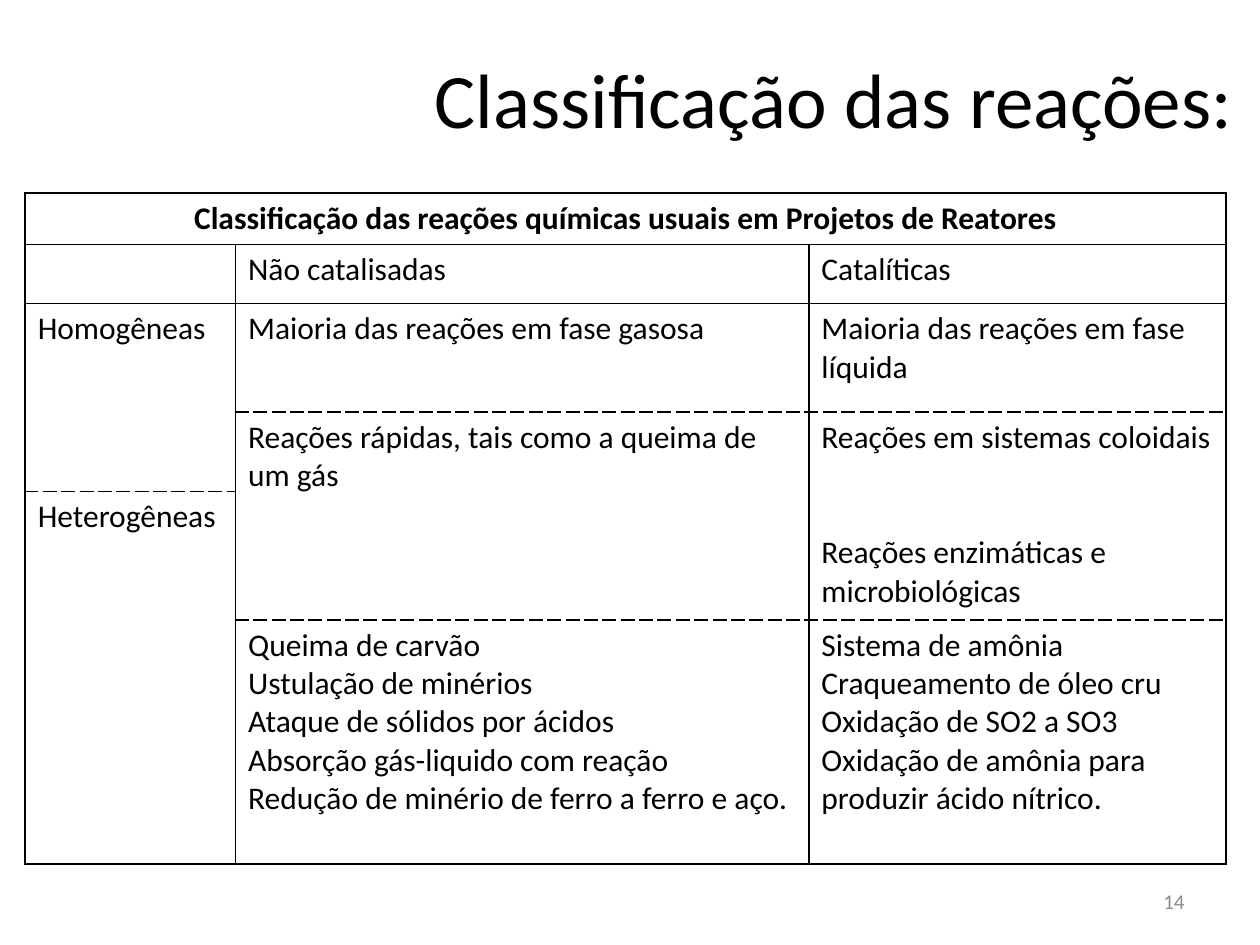
from itertools import product

from lxml.etree import SubElement
from pptx import Presentation
from pptx.dml.color import RGBColor
from pptx.enum.text import MSO_ANCHOR, PP_ALIGN
from pptx.oxml.ns import qn
from pptx.util import Inches, Pt

BLACK = RGBColor(0x00, 0x00, 0x00)
GRAY = RGBColor(0x8C, 0x8C, 0x8C)
FONT = "Calibri"

COLUMN_WIDTHS = [1.67, 4.55, 3.31]
ROW_HEIGHTS = [0.41, 0.47, 0.86, 0.63, 1.02, 1.94]
DASHED_EDGES = {(4, 0), (3, 1), (5, 1), (3, 2), (5, 2)}
BLOCKS = [
    (0, 0, 1, 3, ["Classificação das reações químicas usuais em Projetos de Reatores"]),
    (1, 0, 1, 1, []),
    (1, 1, 1, 1, ["Não catalisadas"]),
    (1, 2, 1, 1, ["Catalíticas"]),
    (2, 0, 2, 1, ["Homogêneas"]),
    (2, 1, 1, 1, ["Maioria das reações em fase gasosa"]),
    (2, 2, 1, 1, ["Maioria das reações em fase líquida"]),
    (3, 1, 2, 1, ["Reações rápidas, tais como a queima de um gás"]),
    (3, 2, 2, 1, ["Reações em sistemas coloidais",
                  "Reações enzimáticas e microbiológicas"]),
    (4, 0, 2, 1, ["Heterogêneas"]),
    (5, 1, 1, 1, ["Queima de carvão", "Ustulação de minérios",
                  "Ataque de sólidos por ácidos",
                  "Absorção gás-liquido com reação",
                  "Redução de minério de ferro a ferro e aço."]),
    (5, 2, 1, 1, ["Sistema de amônia", "Craqueamento de óleo cru",
                  "Oxidação de SO2 a SO3",
                  "Oxidação de amônia para produzir ácido nítrico."]),
]


def format_text(text_frame, size, color=BLACK, bold=False, align=PP_ALIGN.LEFT):
    """Give every paragraph of a frame the same look."""
    for paragraph in text_frame.paragraphs:
        paragraph.alignment = align
        for run in paragraph.runs:
            run.font.name = FONT
            run.font.size = Pt(size)
            run.font.bold = bold
            run.font.color.rgb = color


def add_heading(slide, text):
    """Place and fill the title placeholder."""
    heading = slide.shapes.title
    heading.left, heading.top = Inches(3.35), Inches(-0.03)
    heading.width, heading.height = Inches(6.65), Inches(1.61)
    heading.text_frame.text = text
    heading.text_frame.vertical_anchor = MSO_ANCHOR.MIDDLE
    format_text(heading.text_frame, 44)


def add_page_number(slide, number):
    """Write the page number at the lower right."""
    page = slide.shapes.add_textbox(Inches(7.17), Inches(6.95), Inches(2.33), Inches(0.4))
    page.text_frame.word_wrap = True
    page.text_frame.vertical_anchor = MSO_ANCHOR.MIDDLE
    page.text_frame.text = number
    format_text(page.text_frame, 12, GRAY, align=PP_ALIGN.RIGHT)


def draw_borders(cell, dashed_top, dashed_bottom):
    """Draw the four edges of a cell and leave it unfilled."""
    properties = cell._tc.get_or_add_tcPr()
    edges = [("L", False), ("R", False), ("T", dashed_top), ("B", dashed_bottom)]
    for side, dashed in edges:
        edge = SubElement(properties, qn(f"a:ln{side}"), w=str(Pt(1)))
        fill = SubElement(edge, qn("a:solidFill"))
        SubElement(fill, qn("a:srgbClr"), val=str(BLACK))
        SubElement(edge, qn("a:prstDash"), val="lgDash" if dashed else "solid")
    cell.fill.background()


def fill_block(table, row, column, row_span, column_span, lines):
    """Merge, outline and fill one block of the table."""
    cell = table.cell(row, column)
    end = row + row_span
    if row_span * column_span > 1:
        cell.merge(table.cell(end - 1, column + column_span - 1))
    for r, c in product(range(row, end), range(column, column + column_span)):
        draw_borders(table.cell(r, c), (row, column) in DASHED_EDGES,
                     (end, column) in DASHED_EDGES)
    cell.text_frame.text = "\n".join(lines)
    is_header = row == 0
    format_text(cell.text_frame, 18, bold=is_header,
                align=PP_ALIGN.CENTER if is_header else PP_ALIGN.LEFT)


def add_reaction_table(slide):
    """Build the classification table."""
    table = slide.shapes.add_table(
        len(ROW_HEIGHTS), len(COLUMN_WIDTHS), Inches(0.2), Inches(1.53),
        Inches(sum(COLUMN_WIDTHS)), Inches(sum(ROW_HEIGHTS))).table
    table.first_row = table.horz_banding = False
    for column, width in zip(table.columns, COLUMN_WIDTHS):
        column.width = Inches(width)
    for row, height in zip(table.rows, ROW_HEIGHTS):
        row.height = Inches(height)
    for block in BLOCKS:
        fill_block(table, *block)
    enzymatic = table.cell(3, 2).text_frame.paragraphs[1]
    enzymatic.space_before = Pt(44)


def main():
    """Build and save the slide."""
    deck = Presentation()
    deck.slide_width, deck.slide_height = Inches(10), Inches(7.5)
    slide = deck.slides.add_slide(deck.slide_layouts[5])
    add_heading(slide, "Classificação das reações:")
    add_page_number(slide, "14")
    add_reaction_table(slide)
    deck.save("out.pptx")


if __name__ == "__main__":
    main()
